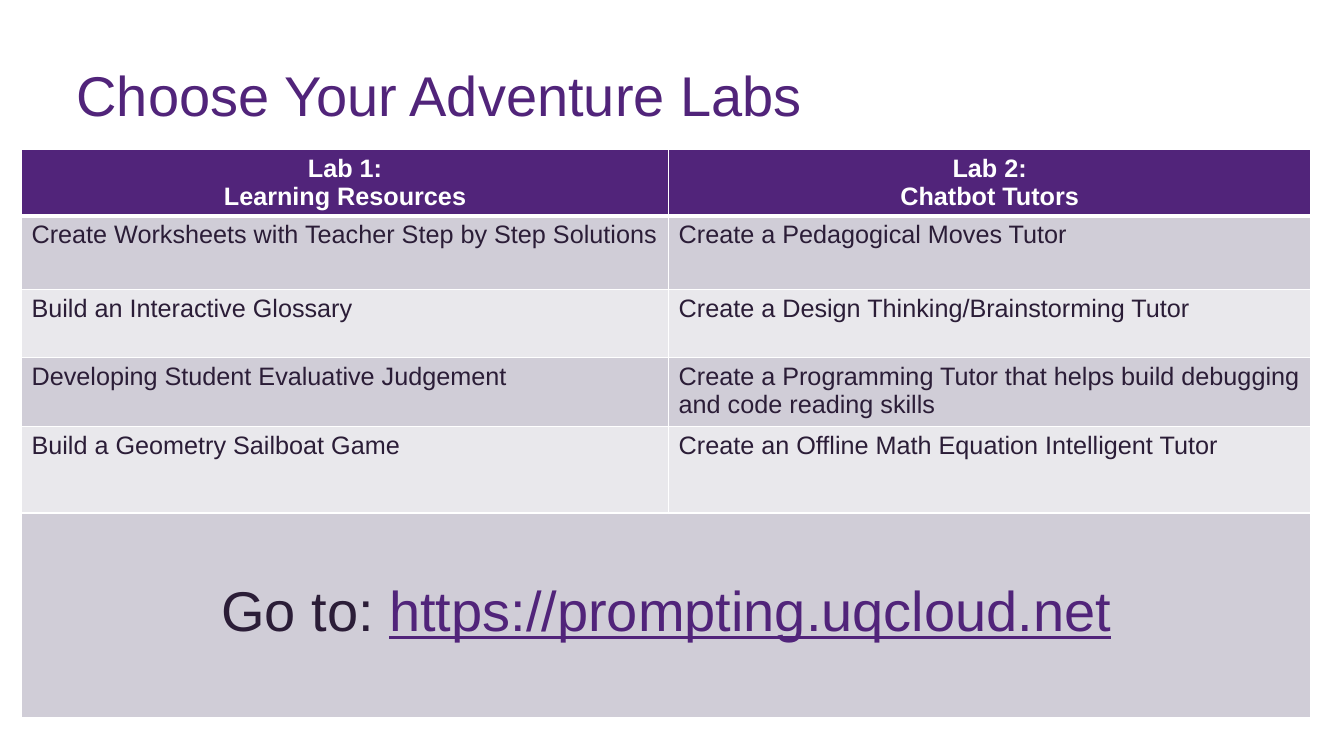
from lxml import etree
from pptx import Presentation
from pptx.dml.color import RGBColor
from pptx.enum.text import MSO_ANCHOR, MSO_AUTO_SIZE, PP_ALIGN
from pptx.oxml.ns import qn
from pptx.util import Inches, Pt

TOP = MSO_ANCHOR.TOP
LEFT, CENTER = PP_ALIGN.LEFT, PP_ALIGN.CENTER
NO_FIT = MSO_AUTO_SIZE.NONE

COLORS = {
    "purple": "51247A",
    "ink": "2B1D37",
    "white": "FFFFFF",
    "dark_band": "D0CDD7",
    "light_band": "E9E8EC",
}
FONT = "Arial"
TITLE_ONLY = 5

LABS = [
    ("Lab 1:\vLearning Resources", "Lab 2:\vChatbot Tutors"),
    ("Create Worksheets with Teacher Step by Step Solutions",
     "Create a Pedagogical Moves Tutor"),
    ("Build an Interactive Glossary",
     "Create a Design Thinking/Brainstorming Tutor"),
    ("Developing Student Evaluative Judgement",
     "Create a Programming Tutor that helps build debugging and code reading skills"),
    ("Build a Geometry Sailboat Game",
     "Create an Offline Math Equation Intelligent Tutor"),
]
# Shares of the slide, in percent of its width and height
LAB_WIDTHS = [48.15, 47.78]
LAB_HEIGHTS = [8.67, 9.73, 9.07, 9.07, 11.47, 27.07]


class LabSlide:
    """Holds the style and the slide; lengths are percent of the slide size."""

    def __init__(self, deck):
        self.column = deck.slide_width / 100
        self.row = deck.slide_height / 100
        self.slide = deck.slides.add_slide(deck.slide_layouts[TITLE_ONLY])

    def across(self, share):
        return round(share * self.column)

    def down(self, share):
        return round(share * self.row)

    def style(self, font, size, color, bold=False):
        font.name, font.size, font.bold = FONT, Pt(size), bold
        font.color.rgb = RGBColor.from_string(COLORS[color])

    def title(self, wording, left, top, width, height):
        heading = self.slide.shapes.title
        heading.left, heading.top = self.across(left), self.down(top)
        heading.width, heading.height = self.across(width), self.down(height)
        frame = heading.text_frame
        frame.text = wording
        frame.auto_size, frame.vertical_anchor = NO_FIT, TOP
        frame.margin_left = frame.margin_right = 0
        frame.margin_top = frame.margin_bottom = 0
        line = frame.paragraphs[0]
        line.alignment, line.line_spacing = LEFT, 0.9
        self.style(line.font, 40, "purple")

    def table(self, left, top, widths, heights):
        grid = self.slide.shapes.add_table(
            len(heights), len(widths), self.across(left), self.down(top),
            self.across(sum(widths)), self.down(sum(heights))).table
        for column, width in zip(grid.columns, widths):
            column.width = self.across(width)
        for row, height in zip(grid.rows, heights):
            row.height = self.down(height)
        return grid

    def cell(self, cell, fill, bottom_line=1):
        self.borders(cell, bottom_line)
        cell.fill.solid()
        cell.fill.fore_color.rgb = RGBColor.from_string(COLORS[fill])
        return cell.text_frame.paragraphs[0]

    def borders(self, cell, bottom_line):
        properties = cell._tc.get_or_add_tcPr()
        for side, points in (("L", 1), ("R", 1), ("T", 1), ("B", bottom_line)):
            edge = etree.SubElement(properties, qn(f"a:ln{side}"), w=str(Pt(points)))
            paint = etree.SubElement(edge, qn("a:solidFill"))
            etree.SubElement(paint, qn("a:srgbClr"), val=COLORS["white"])


def band(row):
    return "dark_band" if row % 2 else "light_band"


def main():
    deck = Presentation()
    deck.slide_width, deck.slide_height = Inches(13.33), Inches(7.5)
    page = LabSlide(deck)
    page.title("Choose Your Adventure Labs", 5.7, 9.07, 88.6, 6.8)

    labs = page.table(1.6, 19.73, LAB_WIDTHS, LAB_HEIGHTS)
    for row, activities in enumerate(LABS):
        header = row == 0
        for column, activity in enumerate(activities):
            entry = page.cell(labs.cell(row, column),
                              "purple" if header else band(row),
                              3 if header else 1)
            entry.text = activity
            entry.alignment = CENTER if header else LEFT
            page.style(entry.font, 18, "white" if header else "ink", header)

    last = len(LABS)
    footer = labs.cell(last, 0)
    footer.merge(labs.cell(last, 1))
    footer.margin_top = Inches(0.67)
    invitation = page.cell(footer, band(last))
    invitation.alignment = CENTER
    for wording, color in (("Go to: ", "ink"),
                           ("https://prompting.uqcloud.net", "purple")):
        run = invitation.add_run()
        run.text = wording
        page.style(run.font, 40, color)
        run.font.underline = color == "purple"

    deck.save("out.pptx")


if __name__ == "__main__":
    main()
